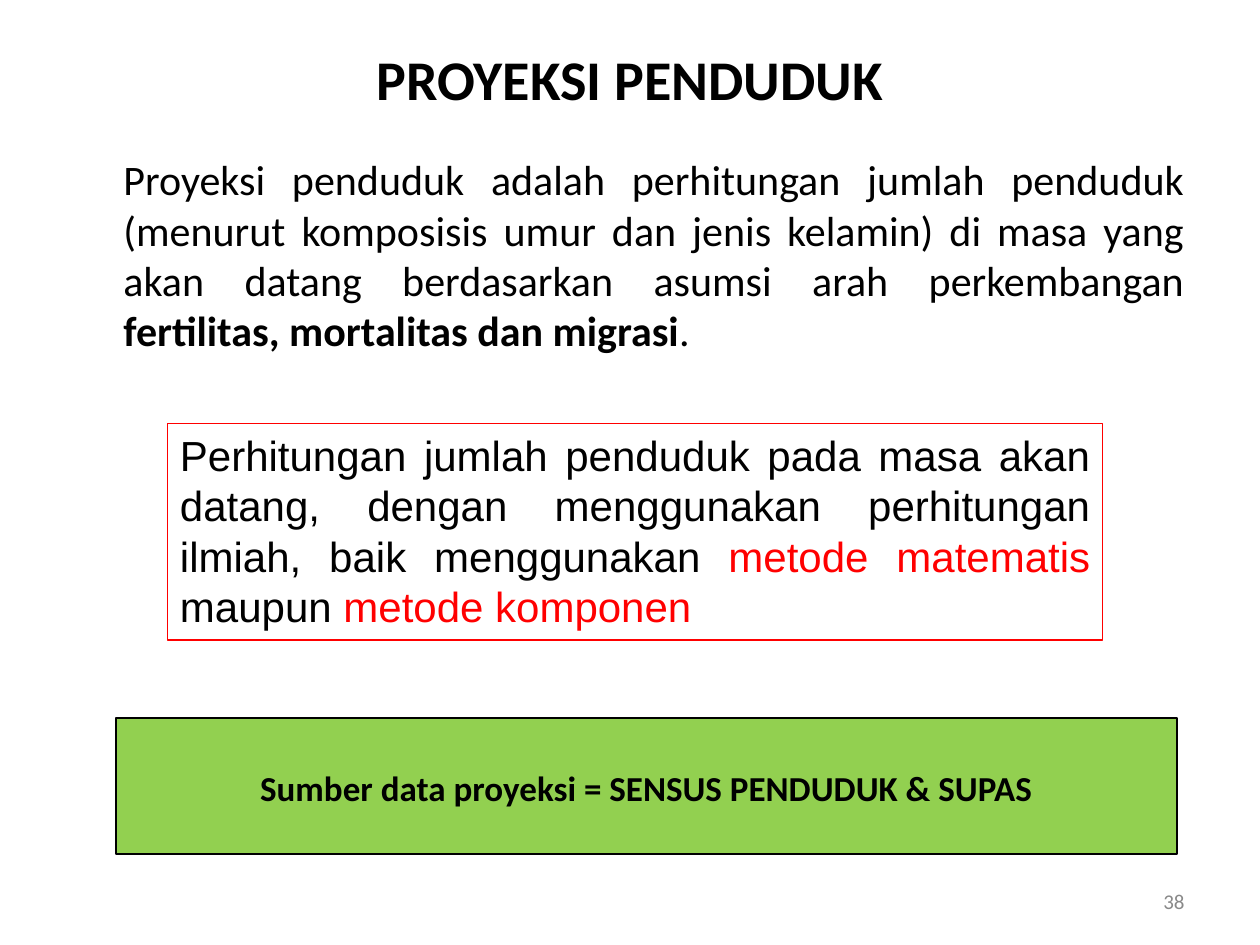
from lxml import etree
from pptx import Presentation
from pptx import util as u
from pptx.dml.color import RGBColor
from pptx.enum import shapes, text
from pptx.oxml.ns import qn

COLS, ROWS = 100, 75
BLACK, RED, GREEN, GREY = "000000", "FF0000", "92D050", "898989"
ALIGN = text.PP_ALIGN
ANCHOR = text.MSO_ANCHOR


def rgb(value):
    return RGBColor.from_string(value)


class Deck:
    """Holds the style and the current slide; lengths are grid columns and rows."""

    font = "Calibri"

    def __init__(self):
        self.prs = Presentation()
        self.prs.slide_width, self.prs.slide_height = u.Inches(10), u.Inches(7.5)
        self.s = self.prs.slides.add_slide(self.prs.slide_layouts[1])

    def box(self, col, row, width, height):
        dx, dy = self.prs.slide_width / COLS, self.prs.slide_height / ROWS
        return [round(n) for n in (col * dx, row * dy, width * dx, height * dy)]

    def set_runs(self, sp, runs, size, align, anchor=ANCHOR.TOP, font=None):
        """Fill a shape with one paragraph of (text, colour, bold) runs."""
        tf = sp.text_frame
        tf.word_wrap = True
        tf.auto_size = text.MSO_AUTO_SIZE.NONE
        tf.vertical_anchor = anchor
        p = tf.paragraphs[0]
        p.alignment = align
        for words, colour, bold in runs:
            r = p.add_run()
            r.text = words
            r.font.name, r.font.size = font or self.font, u.Pt(size)
            r.font.bold, r.font.color.rgb = bold, rgb(colour)
        return p

    def place(self, sp, area):
        sp.left, sp.top, sp.width, sp.height = self.box(*area)
        return sp

    def title(self, area, words):
        sp = self.place(self.s.shapes.title, area)
        self.set_runs(sp, [(words, BLACK, True)], 32, ALIGN.CENTER, ANCHOR.MIDDLE)

    def body(self, area, runs):
        sp = self.place(self.s.placeholders[1], area)
        p = self.set_runs(sp, runs, 24, ALIGN.JUSTIFY)
        p.space_before = u.Pt(4.8)
        # Indented paragraph without a bullet
        pPr = p._p.get_or_add_pPr()
        pPr.set("marL", str(u.Inches(0.38)))
        pPr.set("indent", "0")
        etree.SubElement(pPr, qn("a:buNone"))

    def panel(self, area, runs, size, align, line, weight, fill=None, inset=0.05, font=None):
        sp = self.s.shapes.add_shape(shapes.MSO_SHAPE.RECTANGLE, *self.box(*area))
        sp.shadow.inherit = False
        if fill:
            sp.fill.solid()
            sp.fill.fore_color.rgb = rgb(fill)
        else:
            sp.fill.background()
        sp.line.color.rgb, sp.line.width = rgb(line), u.Pt(weight)
        self.set_runs(sp, runs, size, align, font=font)
        sp.text_frame.margin_top = u.Inches(inset)

    def label(self, area, words):
        sp = self.s.shapes.add_textbox(*self.box(*area))
        self.set_runs(sp, [(words, GREY, False)], 12, ALIGN.RIGHT, ANCHOR.MIDDLE)


def main():
    deck = Deck()

    # Title and definition
    deck.title((5, 3, 90, 6.4), "PROYEKSI PENDUDUK")
    deck.body((5, 11.7, 90, 17.2), [
        ("Proyeksi penduduk adalah perhitungan jumlah penduduk (menurut komposisis umur "
         "dan jenis kelamin) di masa yang akan datang berdasarkan asumsi arah "
         "perkembangan ", BLACK, False),
        ("fertilitas, mortalitas dan migrasi", BLACK, True),
        (".", BLACK, False),
    ])

    # Data source
    deck.panel((9.2, 57, 84.2, 10.8),
               [("Sumber data proyeksi = SENSUS PENDUDUK & SUPAS", BLACK, True)],
               20, ALIGN.CENTER, BLACK, 1, fill=GREEN, inset=0.38)

    # Methods
    deck.panel((13.3, 33.6, 74.2, 17.2), [
        ("Perhitungan jumlah penduduk pada masa akan datang, dengan menggunakan "
         "perhitungan ilmiah, baik menggunakan ", BLACK, False),
        ("metode matematis", RED, False),
        (" maupun ", BLACK, False),
        ("metode komponen", RED, False),
    ], 24, ALIGN.JUSTIFY, RED, 0.75, font="Arial")

    # Page number
    deck.label((71.7, 69.5, 23.3, 4), "38")

    deck.prs.save("out.pptx")


if __name__ == "__main__":
    main()
